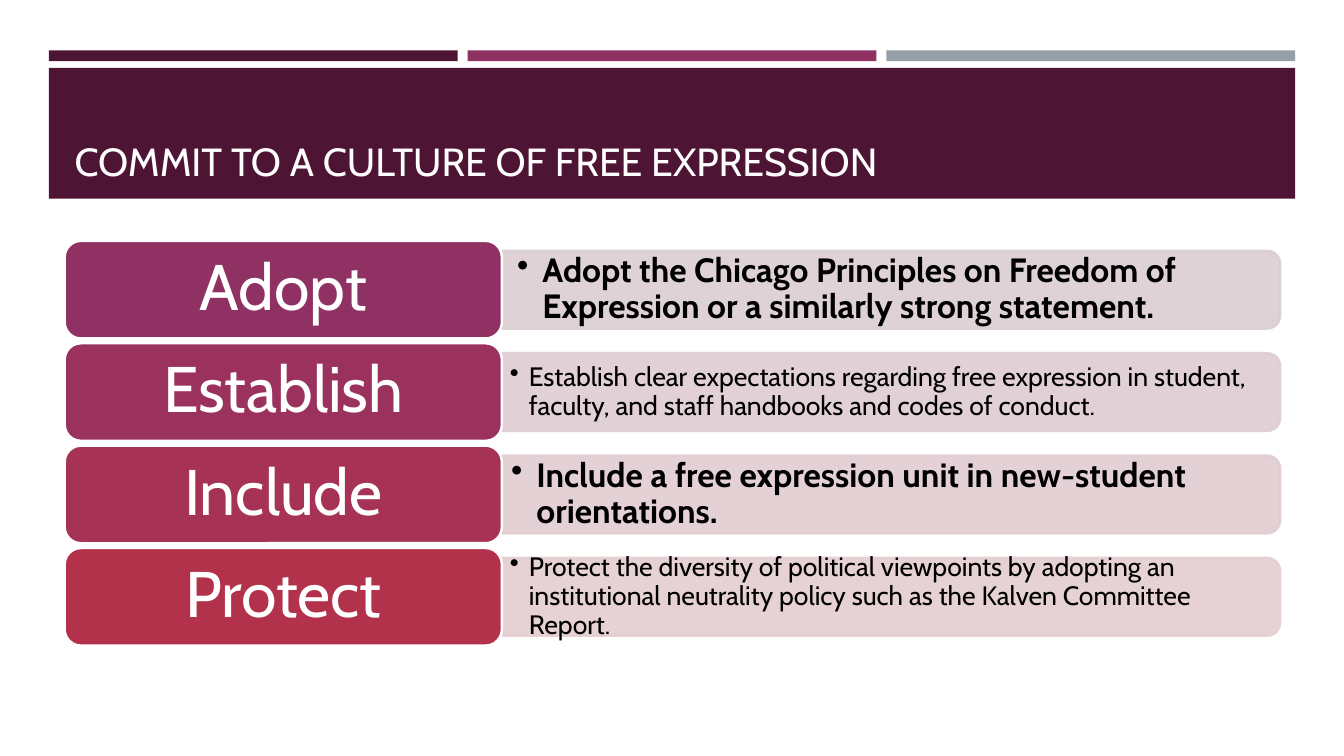
import pptx
import pptx.util
import pptx.dml.color
import pptx.enum.shapes
import pptx.enum.text
import pptx.oxml
import pptx.oxml.ns
from pptx.util import Cm

KIND = pptx.enum.shapes.MSO_SHAPE
ALIGN = pptx.enum.text.PP_ALIGN
ANCHOR = pptx.enum.text.MSO_ANCHOR
FONT = "Cabin"

ROWS = [
    ("Adopt", "903163", "DBCED3", 24, 0.38, 0.2,
     "Adopt the Chicago Principles on Freedom of Expression or a similarly strong statement."),
    ("Establish", "9B325D", "DECDD2", 19, 0.2, 0.1,
     "Establish clear expectations regarding free expression in student, faculty, and staff "
     "handbooks and codes of conduct."),
    ("Include", "A63256", "E1CDD1", 24, 0.23, 0.1,
     "Include a free expression unit in new-student orientations."),
    ("Protect", "B2324B", "E4CED0", 19, 0.2, 0.1,
     "Protect the diversity of political viewpoints by adopting an institutional neutrality "
     "policy such as the Kalven Committee Report."),
]


def paint(target, color):
    """Give a fill or line format a solid colour."""
    target.solid()
    target.fore_color.rgb = pptx.dml.color.RGBColor.from_string(color)


def block(slide, kind, box, color, edge=None):
    """Add a flat preset shape in a box given in centimetres."""
    shape = slide.shapes.add_shape(kind, *map(Cm, box))
    shape.shadow.inherit = False
    paint(shape.fill, color)
    if edge:
        paint(shape.line.fill, edge)
        shape.line.width = pptx.util.Pt(1.75)
    else:
        shape.line.fill.background()
    return shape


def write(shape, text, size, color, align, anchor, pads, bold=False):
    """Write one formatted run into a shape and return its paragraph."""
    frame = shape.text_frame
    frame.word_wrap = True
    frame.auto_size = pptx.enum.text.MSO_AUTO_SIZE.NONE
    frame.vertical_anchor = anchor
    frame.margin_left = frame.margin_right = Cm(pads[0])
    frame.margin_top = frame.margin_bottom = Cm(pads[1])
    para = frame.paragraphs[0]
    para.alignment = align
    para.line_spacing = 0.9
    run = para.add_run()
    run.text = text
    run.font.name = FONT
    run.font.size = pptx.util.Pt(size)
    run.font.bold = bold
    paint(run.font.fill, color)
    return para


def fade(shape):
    """Make the fill and line of a shape 90 percent opaque."""
    for node in shape.element.spPr.iter(pptx.oxml.ns.qn("a:srgbClr")):
        alpha = pptx.oxml.parse_xml(
            f'<a:alpha {pptx.oxml.ns.nsdecls("a")} val="90000"/>')
        node.append(alpha)


def dot(para, indent):
    """Give a paragraph a hanging round bullet."""
    props = para._p.get_or_add_pPr()
    props.set("marL", str(Cm(indent)))
    props.set("indent", str(-Cm(indent)))
    props.append(pptx.oxml.parse_xml(
        f'<a:buChar {pptx.oxml.ns.nsdecls("a")} char="•"/>'))


def header(slide, left, top, wide):
    """Draw the three strips, the title band and the title."""
    gap = 0.25
    strip = (wide - 2 * gap) / 3
    for i, color in enumerate(("4D1434", "903163", "969FA7")):
        block(slide, KIND.RECTANGLE, (left + i * (strip + gap), top, strip, 0.27), color)
    block(slide, KIND.RECTANGLE, (left, top + 0.44, wide, 3.3), "4D1434")
    title = slide.shapes.title
    title.left, title.top = Cm(left + 0.4), Cm(top + 0.69)
    title.width, title.height = Cm(wide - 0.8), Cm(2.82)
    tree = title.element.getparent()
    tree.append(title.element)
    para = write(title, "COMMIT TO A CULTURE OF FREE EXPRESSION", 28, "FFFEFF",
                 ALIGN.LEFT, ANCHOR.BOTTOM, (0.25, 0.13))
    para.line_spacing = 1.0


def band(slide, left, top, wide, high, row):
    """Draw one row: a pale panel with a bullet and a coloured label."""
    name, color, pale, size, side, pad, text = row
    label = 11.02
    long, thin = wide - label, 1.96
    mid = top + high / 2
    panel = block(slide, KIND.ROUND_2_SAME_RECTANGLE,
                  (left + label + (long - thin) / 2, mid - long / 2, thin, long), pale, pale)
    panel.rotation = 90
    fade(panel)
    note = slide.shapes.add_textbox(
        Cm(left + label), Cm(mid - 0.89), Cm(long - 0.1), Cm(1.78))
    large = size == 24
    para = write(note, text, size, "000000", ALIGN.LEFT, ANCHOR.MIDDLE, (side, pad), large)
    dot(para, 0.64 if large else 0.48)
    tag = block(slide, KIND.ROUNDED_RECTANGLE, (left, top, label, high), color, "FFFFFF")
    write(tag, name, 46, "FFFFFF", ALIGN.CENTER, ANCHOR.MIDDLE, (0.48, 0.25))


def main():
    """Build and save the slide."""
    deck = pptx.Presentation()
    deck.slide_width, deck.slide_height = Cm(33.87), Cm(19.05)
    slide = deck.slides.add_slide(deck.slide_layouts[5])
    header(slide, 1.23, 1.27, 31.41)
    for i, row in enumerate(ROWS):
        band(slide, 1.63, 6.07 + i * 2.58, 30.63, 2.46, row)
    deck.save("out.pptx")


if __name__ == "__main__":
    main()
